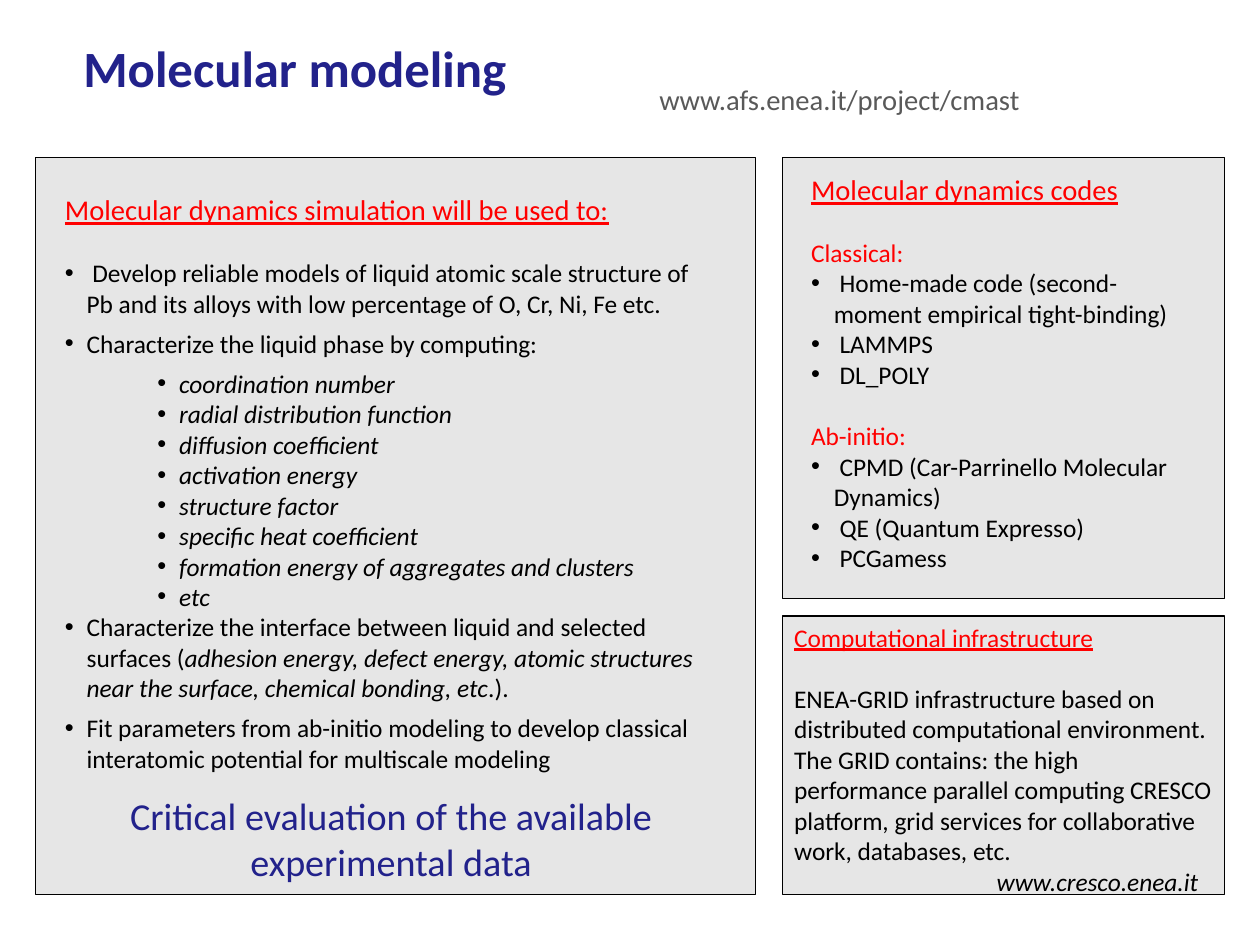
from collections import namedtuple
from lxml.etree import SubElement
from pptx import Presentation
from pptx.dml.color import RGBColor as Color
from pptx.enum.shapes import MSO_SHAPE as Preset
from pptx.enum.text import MSO_ANCHOR as Anchor, PP_ALIGN as Align
from pptx.oxml.ns import qn
from pptx.util import Cm, Inches, Pt

Style = namedtuple("Style", "size color bold italic underline hang indent before after align right",
                   defaults=(False, False, False, 0, 0, 0, 0, Align.LEFT, 0))

THEME = {
    "font": "Calibri",
    "navy": "22228B", "red": "FF0000", "black": "000000", "grey": "595959", "panel": "E6E6E6",
    "title": 32, "summary": 24, "heading": 18, "body": 16,
    "line": 0.75, "gap": 19.5,
}
BODY = Style(THEME["body"], THEME["black"])
HEADING = Style(THEME["heading"], THEME["red"], underline=True)
AIM = BODY._replace(hang=0.19, indent=0.19, after=6)
STYLES = {
    "title": Style(THEME["title"], THEME["navy"], bold=True),
    "site": Style(THEME["heading"], THEME["grey"]),
    "summary": Style(THEME["summary"], THEME["navy"], align=Align.CENTER),
    "heading": HEADING,
    "small heading": HEADING._replace(size=THEME["body"]),
    "first aim": AIM._replace(before=THEME["gap"]),
    "aim": AIM,
    "quantity": BODY._replace(italic=True, hang=0.19, indent=1),
    "group": Style(THEME["body"], THEME["red"], before=THEME["gap"]),
    "code": BODY._replace(hang=0.2, indent=0.2),
    "body": BODY._replace(before=THEME["gap"]),
    "link": BODY._replace(italic=True, align=Align.RIGHT, right=0.13),
}

TITLE = [("title", "Molecular modeling")]
SITE = [("site", "www.afs.enea.it/project/cmast")]
SUMMARY = [("summary", "Critical evaluation of the available experimental data")]
QUANTITIES = ["coordination number", "radial distribution function", "diffusion coefficient",
              "activation energy", "structure factor", "specific heat coefficient",
              "formation energy of aggregates and clusters", "etc"]
AIMS = [
    ("heading", "Molecular dynamics simulation will be used to:"),
    ("first aim", " Develop reliable models of liquid atomic scale structure of "
                  "Pb and its alloys with low percentage of O, Cr, Ni, Fe etc."),
    ("aim", "Characterize the liquid phase by computing:"),
    *[("quantity", quantity) for quantity in QUANTITIES],
    ("aim", "Characterize the interface between liquid and selected surfaces (",
     "adhesion energy, defect energy, atomic structures near the surface, chemical bonding, etc",
     ".)."),
    ("aim", "Fit parameters from ab-initio modeling to develop classical "
            "interatomic potential for multiscale modeling"),
]
CODES = [
    ("heading", "Molecular dynamics codes"),
    ("group", "Classical:"),
    ("code", " Home-made code (second-moment empirical tight-binding)"),
    ("code", " LAMMPS"),
    ("code", " DL_POLY"),
    ("group", "Ab-initio:"),
    ("code", " CPMD (Car-Parrinello Molecular Dynamics)"),
    ("code", " QE (Quantum Expresso)"),
    ("code", " PCGamess"),
]
INFRASTRUCTURE = [
    ("small heading", "Computational infrastructure"),
    ("body", "ENEA-GRID infrastructure based on distributed computational environment. "
             "The GRID contains: the high performance parallel computing CRESCO platform, "
             "grid services for collaborative work, databases, etc."),
    ("link", "www.cresco.enea.it"),
]

WIDTH, HEIGHT = Cm(28), Cm(21)
MARGIN, TOP, BOTTOM = 2.83, 16.67, 94.7
LEFT_WIDTH, RIGHT_WIDTH = 57.15, 35.03
RIGHT = 100 - MARGIN - RIGHT_WIDTH
CODES_HEIGHT, PANEL_GAP = 46.67, 1.85
INFRA_TOP = TOP + CODES_HEIGHT + PANEL_GAP

PANELS = [
    ((MARGIN, TOP, LEFT_WIDTH, BOTTOM - TOP), []),
    ((RIGHT, TOP, RIGHT_WIDTH, CODES_HEIGHT), []),
    ((RIGHT, INFRA_TOP, RIGHT_WIDTH, BOTTOM - INFRA_TOP), INFRASTRUCTURE),
]
TEXTS = [
    ((4.26, 19.47, 53.63, 63.24), AIMS, Anchor.MIDDLE, True),
    ((5.72, 3.26, 35.75, 7.74), TITLE, Anchor.TOP, False),
    ((51.43, 8.1, 30.76, 4.84), SITE, Anchor.TOP, False),
    ((63.48, 17.6, 32.3, 56.95), CODES, Anchor.TOP, True),
    ((3.54, 83.28, 54.99, 11), SUMMARY, Anchor.TOP, True),
]


def place(share):
    left, top, width, height = share
    return [int(part * side / 100) for part, side in
            ((left, WIDTH), (top, HEIGHT), (width, WIDTH), (height, HEIGHT))]


def add_bullet(paragraph, style):
    properties = paragraph._p.get_or_add_pPr()
    properties.set("marL", str(Inches(style.indent)))
    properties.set("indent", str(-Inches(style.hang)))
    tint = SubElement(properties, qn("a:buClr"))
    SubElement(tint, qn("a:srgbClr"), val=THEME["black"])
    SubElement(properties, qn("a:buFont"), typeface="Arial")
    SubElement(properties, qn("a:buChar"), char="•")


def write(frame, lines, anchor=Anchor.TOP, wrap=True):
    frame.word_wrap = wrap
    frame.vertical_anchor = anchor
    for row, (name, *pieces) in enumerate(lines):
        style = STYLES[name]
        paragraph = frame.add_paragraph() if row else frame.paragraphs[0]
        if style.hang:
            add_bullet(paragraph, style)
        if style.right:
            paragraph._p.get_or_add_pPr().set("marR", str(Inches(style.right)))
        paragraph.alignment = style.align
        paragraph.space_before = Pt(style.before)
        paragraph.space_after = Pt(style.after)
        for order, piece in enumerate(pieces):
            run = paragraph.add_run()
            run.text = piece
            font = run.font
            font.name, font.size = THEME["font"], Pt(style.size)
            font.color.rgb = Color.from_string(style.color)
            font.bold, font.underline = style.bold, style.underline
            font.italic = style.italic or order % 2 == 1


def add_panel(slide, share, lines):
    panel = slide.shapes.add_shape(Preset.RECTANGLE, *place(share))
    panel.shadow.inherit = False
    panel.fill.solid()
    panel.fill.fore_color.rgb = Color.from_string(THEME["panel"])
    panel.line.color.rgb = Color.from_string(THEME["black"])
    panel.line.width = Pt(THEME["line"])
    write(panel.text_frame, lines)


def main():
    deck = Presentation()
    deck.slide_width = WIDTH
    deck.slide_height = HEIGHT
    slide = deck.slides.add_slide(deck.slide_layouts[6])
    for share, lines in PANELS:
        add_panel(slide, share, lines)
    for share, lines, anchor, wrap in TEXTS:
        write(slide.shapes.add_textbox(*place(share)).text_frame, lines, anchor, wrap)
    deck.save("out.pptx")


if __name__ == "__main__":
    main()
